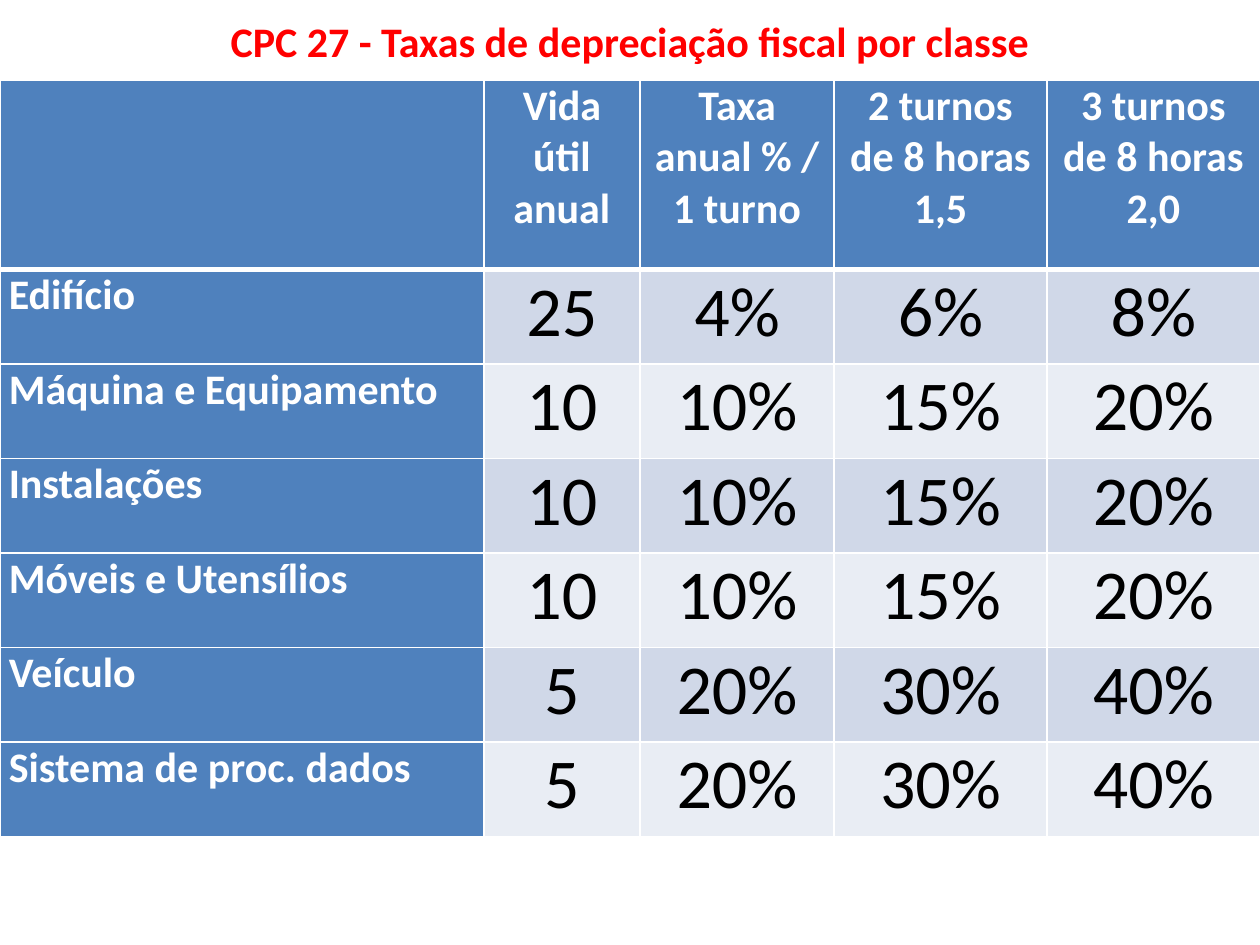
from lxml import etree
from pptx import Presentation
from pptx.dml.color import RGBColor
from pptx.enum import text
from pptx.oxml import ns
from pptx.util import Inches, Pt

TITLE = "CPC 27 - Taxas de depreciação fiscal por classe"
HEADER = ["", "Vida útil anual", "Taxa anual % / 1 turno",
          "2 turnos de 8 horas 1,5", "3 turnos de 8 horas 2,0"]
CLASSES = [
    ["Edifício", "25", "4%", "6%", "8%"],
    ["Máquina e Equipamento", "10", "10%", "15%", "20%"],
    ["Instalações", "10", "10%", "15%", "20%"],
    ["Móveis e Utensílios", "10", "10%", "15%", "20%"],
    ["Veículo", "5", "20%", "30%", "40%"],
    ["Sistema de proc. dados", "5", "20%", "30%", "40%"],
]
ROWS = [HEADER] + CLASSES
COLUMN_WIDTHS = [3.84, 1.24, 1.54, 1.69, 1.69]
HEADER_HEIGHT, ROW_HEIGHT = 1.5, 0.75
TABLE_TOP = 0.64

RED = RGBColor(0xFF, 0x00, 0x00)
WHITE = RGBColor(0xFF, 0xFF, 0xFF)
BLACK = RGBColor(0x00, 0x00, 0x00)
BLUE = RGBColor(0x4F, 0x81, 0xBD)
BANDS = [RGBColor(0xD0, 0xD8, 0xE8), RGBColor(0xE9, 0xED, 0xF4)]
CENTER = text.PP_ALIGN.CENTER
JUSTIFY = text.PP_ALIGN.JUSTIFY


def write(frame, words, size=24, color=WHITE, bold=True, align=CENTER):
    para = frame.paragraphs[0]
    para.alignment = align
    if not words:
        return
    span = para.add_run()
    span.text = words
    span.font.name = "Calibri"
    span.font.size = Pt(size)
    span.font.bold = bold
    span.font.color.rgb = color


def add_borders(cell, bottom=1, top=1):
    properties = cell._tc.get_or_add_tcPr()
    widths = {"a:lnL": 1, "a:lnR": 1, "a:lnT": top, "a:lnB": bottom}
    for position, (side, width) in enumerate(widths.items()):
        line = etree.Element(ns.qn(side), w=str(Pt(width)))
        fill = etree.SubElement(line, ns.qn("a:solidFill"))
        etree.SubElement(fill, ns.qn("a:srgbClr"), val=str(WHITE))
        properties.insert(position, line)


def add_title(page):
    box = page.shapes.add_textbox(Inches(0.5), 0, Inches(9), Inches(TABLE_TOP))
    box.text_frame.word_wrap = True
    box.text_frame.vertical_anchor = text.MSO_ANCHOR.MIDDLE
    write(box.text_frame, TITLE, color=RED)


def add_rates(page):
    height = HEADER_HEIGHT + ROW_HEIGHT * len(CLASSES)
    table = page.shapes.add_table(
        len(ROWS), len(HEADER), 0, Inches(TABLE_TOP),
        Inches(sum(COLUMN_WIDTHS)), Inches(height)).table
    for column, width in zip(table.columns, COLUMN_WIDTHS):
        column.width = Inches(width)
    for r, values in enumerate(ROWS):
        table.rows[r].height = Inches(ROW_HEIGHT if r else HEADER_HEIGHT)
        for c, value in enumerate(values):
            cell = table.cell(r, c)
            cell.margin_left = cell.margin_right = Inches(0.07)
            cell.margin_top = cell.margin_bottom = 0
            is_rate = r > 0 and c > 0
            cell.fill.solid()
            cell.fill.fore_color.rgb = BANDS[(r - 1) % 2] if is_rate else BLUE
            add_borders(cell, bottom=1 if r else 3, top=3 if r == 1 else 1)
            if is_rate:
                write(cell.text_frame, value, size=40, color=BLACK, bold=False)
            else:
                write(cell.text_frame, value, align=JUSTIFY if r else CENTER)


def main():
    deck = Presentation()
    deck.slide_width, deck.slide_height = Inches(10), Inches(7.5)
    page = deck.slides.add_slide(deck.slide_layouts[6])
    add_title(page)
    add_rates(page)
    deck.save("out.pptx")


if __name__ == "__main__":
    main()
